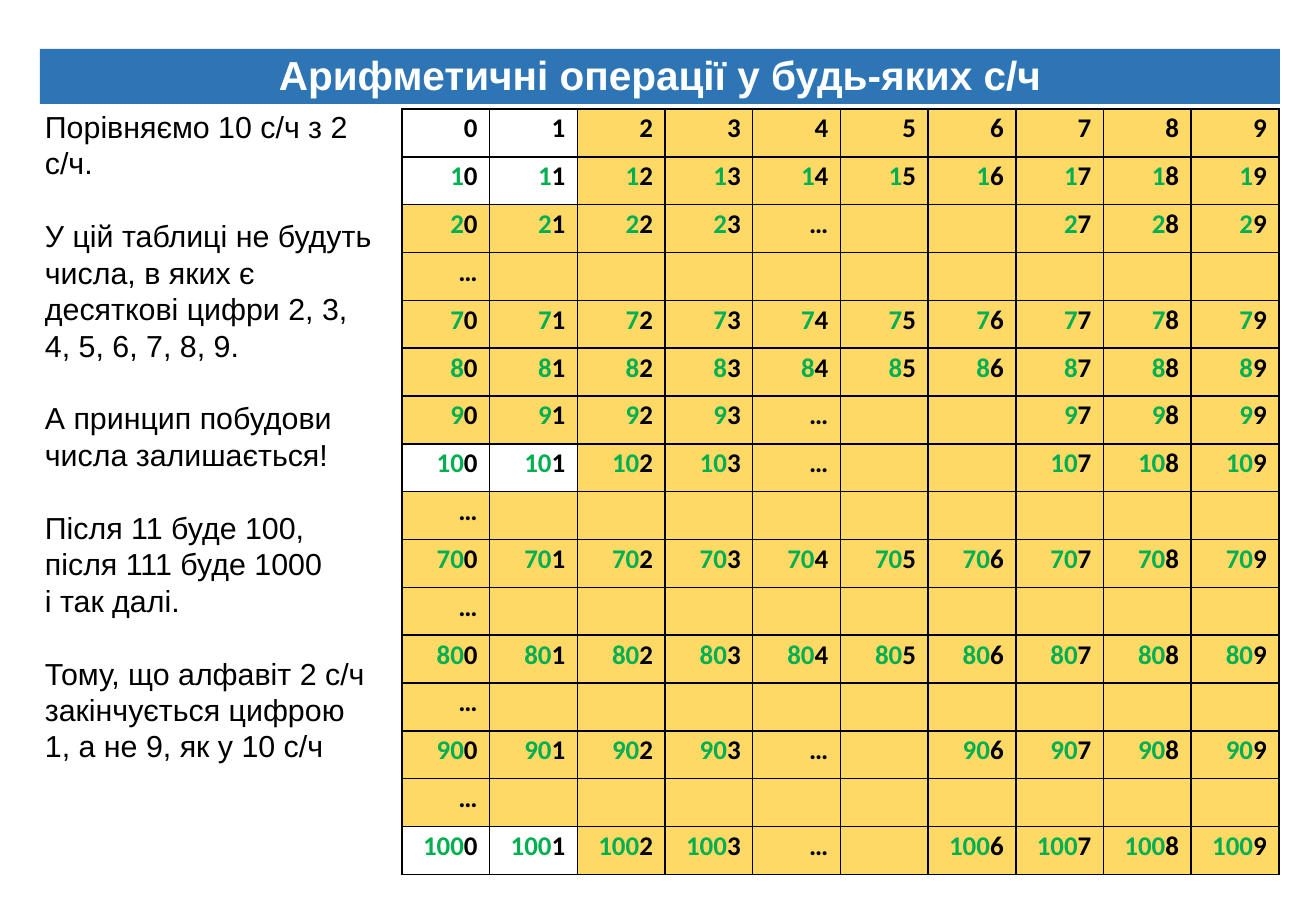
import pptx
import pptx.dml.color
import pptx.enum.text
import pptx.oxml
import pptx.oxml.ns
import pptx.util
from dataclasses import dataclass

PX = 914400 / 121.5
ALIGN = pptx.enum.text.PP_ALIGN
ANCHOR = pptx.enum.text.MSO_ANCHOR


@dataclass(frozen=True)
class Theme:
    banner: str = "2E75B6"
    excluded: str = "FFD966"
    prefix: str = "00B050"
    ink: str = "000000"
    paper: str = "FFFFFF"
    text_font: str = "Arial"
    table_font: str = "Calibri"
    title_size: int = 24
    body_size: int = 18
    cell_size: int = 16


def px(n):
    return pptx.util.Emu(round(n * PX))


def rgb(color):
    return pptx.dml.color.RGBColor.from_string(color)


def add_run(p, text, *, font, size, color, bold=False):
    r = p.add_run()
    r.text = text
    r.font.name = font
    r.font.size = pptx.util.Pt(size)
    r.font.bold = bold
    r.font.color.rgb = rgb(color)
    return r


def add_borders(cell, color):
    """Draw 1 pt lines on all four sides; they must precede the fill."""
    tc_pr = cell._tc.get_or_add_tcPr()
    for i, side in enumerate(("lnL", "lnR", "lnT", "lnB")):
        tc_pr.insert(i, pptx.oxml.parse_xml(
            f'<a:{side} {pptx.oxml.ns.nsdecls("a")} w="12700"><a:solidFill>'
            f'<a:srgbClr val="{color}"/></a:solidFill></a:{side}>'))


class SlideBuilder:
    def __init__(self, prs, theme):
        self.theme = theme
        self.s = prs.slides.add_slide(prs.slide_layouts[5])

    def title(self, text, x, y, w, h):
        t = self.theme
        sp = self.s.shapes.title
        sp.left, sp.top, sp.width, sp.height = map(px, (x, y, w, h))
        sp.fill.solid()
        sp.fill.fore_color.rgb = rgb(t.banner)
        tf = sp.text_frame
        tf.auto_size = pptx.enum.text.MSO_AUTO_SIZE.NONE
        tf.vertical_anchor = ANCHOR.BOTTOM
        tf.margin_left = tf.margin_right = px(10)
        tf.margin_top = tf.margin_bottom = px(5)
        p = tf.paragraphs[0]
        p.alignment = ALIGN.CENTER
        p.line_spacing = 0.9
        add_run(p, text, font=t.text_font, size=t.title_size, color=t.paper, bold=True)

    def text(self, groups, x, y, w, h, gap):
        """Write groups of paragraphs, with a gap in points between groups."""
        t = self.theme
        tf = self.s.shapes.add_textbox(*map(px, (x, y, w, h))).text_frame
        tf.word_wrap = True
        p = tf.paragraphs[0]
        for g, group in enumerate(groups):
            for i, line in enumerate(group):
                if g or i:
                    p = tf.add_paragraph()
                if g and not i:
                    p.space_before = pptx.util.Pt(gap)
                add_run(p, line, font=t.text_font, size=t.body_size, color=t.ink)

    def number_table(self, rows, x, y, w, h):
        """Each row is a shared prefix and ten last digits; a space is an empty cell."""
        n_cols = 10
        table = self.s.shapes.add_table(len(rows), n_cols, *map(px, (x, y, w, h))).table
        table.first_row = table.horz_banding = False
        for col in table.columns:
            col.width = px(w / n_cols)
        for i, (prefix, digits) in enumerate(rows):
            table.rows[i].height = px(h / len(rows))
            for j, digit in enumerate(digits.ljust(n_cols)):
                self.number_cell(table.cell(i, j), prefix, digit)

    def number_cell(self, cell, prefix, digit):
        t = self.theme
        binary = set(prefix + digit) <= set("01")
        cell.fill.solid()
        cell.fill.fore_color.rgb = rgb(t.paper if binary else t.excluded)
        add_borders(cell, t.ink)
        cell.vertical_anchor = ANCHOR.MIDDLE
        p = cell.text_frame.paragraphs[0]
        p.alignment = ALIGN.RIGHT
        p.line_spacing = 0.5
        p.space_after = pptx.util.Pt(6)
        p.font.size = pptx.util.Pt(t.cell_size)
        style = dict(font=t.table_font, size=t.cell_size, bold=True)
        if prefix and digit.isdigit():
            add_run(p, prefix, color=t.prefix, **style)
        if digit != " ":
            add_run(p, digit, color=t.ink, **style)


NOTES = [
    ["Порівняємо 10 с/ч з 2 с/ч."],
    ["У цій таблиці не будуть числа, в яких є десяткові цифри 2, 3, 4, 5, 6, 7, 8, 9."],
    ["А принцип побудови числа залишається!"],
    ["Після 11 буде 100,", "після 111 буде 1000", "і так далі."],
    ["Тому, що алфавіт 2 с/ч закінчується цифрою 1, а не 9, як у 10 с/ч"],
]

FULL = "0123456789"
SKIP_TO_6 = "0123… 6789"
SKIP_TO_7 = "0123…  789"
BREAK = ("", "…")
NUMBERS = [
    ("", FULL), ("1", FULL), ("2", SKIP_TO_7), BREAK,
    ("7", FULL), ("8", FULL), ("9", SKIP_TO_7), ("10", SKIP_TO_7), BREAK,
    ("70", FULL), BREAK, ("80", FULL), BREAK,
    ("90", SKIP_TO_6), BREAK, ("100", SKIP_TO_6),
]


def main():
    prs = pptx.Presentation()
    prs.slide_width, prs.slide_height = px(1316), px(911)
    slide = SlideBuilder(prs, Theme())
    slide.title("Арифметичні операції у будь-яких с/ч", 40, 49, 1240, 55)
    slide.text(NOTES, 33, 102, 351, 712, gap=21.6)
    slide.number_table(NUMBERS, 402, 109, 877, 766)
    prs.save("out.pptx")


if __name__ == "__main__":
    main()
